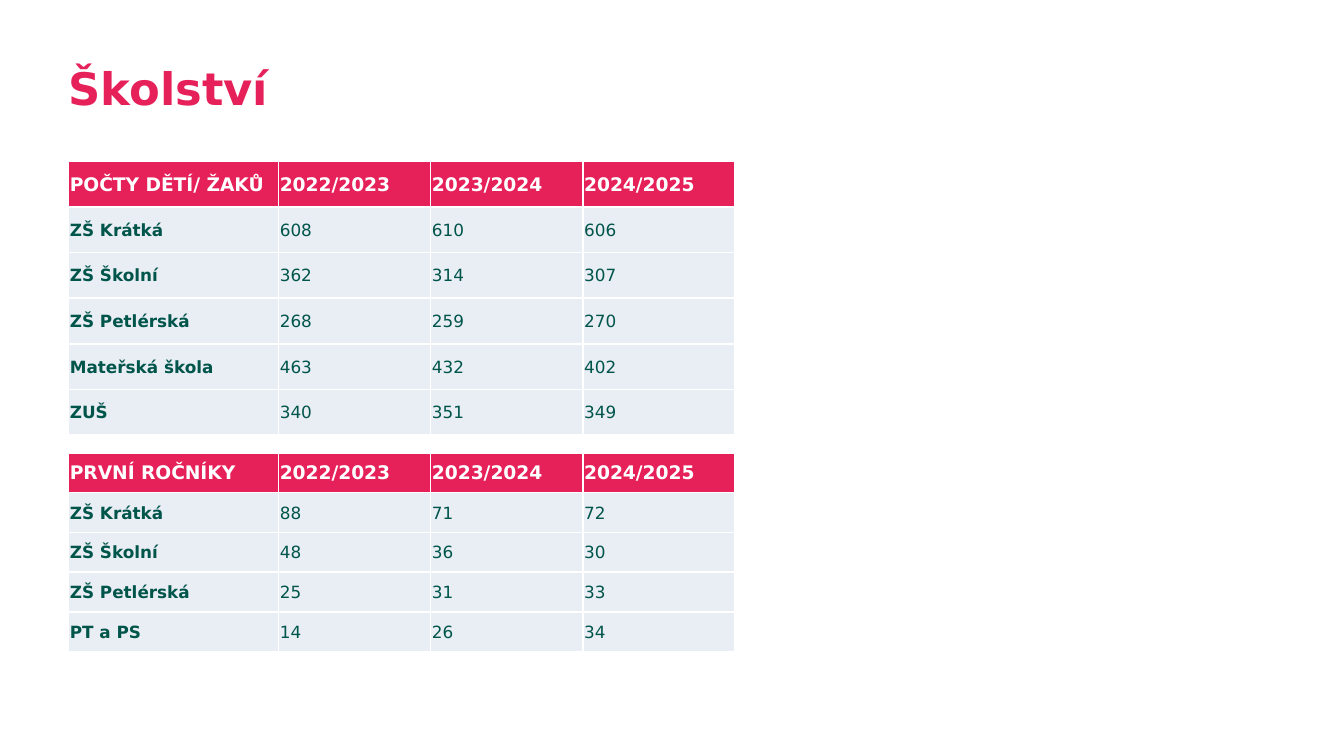
from dataclasses import dataclass

from lxml import etree
from pptx import Presentation
from pptx.dml.color import RGBColor
from pptx.enum.text import MSO_ANCHOR, MSO_AUTO_SIZE, PP_ALIGN
from pptx.oxml.ns import qn
from pptx.util import Inches, Pt

TOP, MIDDLE = MSO_ANCHOR.TOP, MSO_ANCHOR.MIDDLE
LEFT, NO_FIT = PP_ALIGN.LEFT, MSO_AUTO_SIZE.NONE
TITLE_ONLY = 5
LABEL_SHARE = 0.315


@dataclass(frozen=True)
class Theme:
    """Colours and type sizes of the slide."""
    font: str = "DejaVu Sans"
    accent: str = "E6215A"
    ink: str = "00554B"
    band: str = "E9EDF4"
    white: str = "FFFFFF"
    title_size: int = 24
    header_size: int = 10
    body_size: int = 9
    rule_width: int = 1


THEME = Theme()
YEARS = ("2022/2023", "2023/2024", "2024/2025")
PUPIL_COUNTS = [
    ("POČTY DĚTÍ/ ŽAKŮ", *YEARS),
    ("ZŠ Krátká", 608, 610, 606),
    ("ZŠ Školní", 362, 314, 307),
    ("ZŠ Petlérská", 268, 259, 270),
    ("Mateřská škola", 463, 432, 402),
    ("ZUŠ", 340, 351, 349),
]
FIRST_GRADES = [
    ("PRVNÍ ROČNÍKY", *YEARS),
    ("ZŠ Krátká", 88, 71, 72),
    ("ZŠ Školní", 48, 36, 30),
    ("ZŠ Petlérská", 25, 31, 33),
    ("PT a PS", 14, 26, 34),
]


def style_font(font, size, color, bold):
    """Apply the theme typeface with a size, colour and weight."""
    font.name = THEME.font
    font.size = Pt(size)
    font.bold = bold
    font.color.rgb = RGBColor.from_string(color)


def add_borders(cell):
    """Rule all four sides of a cell in white."""
    properties = cell._tc.get_or_add_tcPr()
    for side in ("lnL", "lnR", "lnT", "lnB"):
        rule = etree.SubElement(properties, qn(f"a:{side}"), w=str(Pt(THEME.rule_width)))
        fill = etree.SubElement(rule, qn("a:solidFill"))
        etree.SubElement(fill, qn("a:srgbClr"), val=THEME.white)


def place_title(slide, box, heading):
    """Put the heading into the title placeholder at the given box."""
    title = slide.shapes.title
    title.left, title.top, title.width, title.height = map(Inches, box)
    frame = title.text_frame
    frame.text = heading
    frame.margin_left = frame.margin_right = frame.margin_top = frame.margin_bottom = 0
    frame.vertical_anchor = TOP
    frame.auto_size = NO_FIT
    frame.word_wrap = True
    paragraph = frame.paragraphs[0]
    paragraph.alignment = LEFT
    style_font(paragraph.runs[0].font, THEME.title_size, THEME.accent, True)


def fill_cell(cell, value, is_header, is_label):
    """Write one table value and format its cell."""
    cell.text = str(value)
    cell.margin_left = cell.margin_right = cell.margin_top = Inches(0.01)
    cell.margin_bottom = 0
    cell.vertical_anchor = MIDDLE
    add_borders(cell)
    cell.fill.solid()
    cell.fill.fore_color.rgb = RGBColor.from_string(THEME.accent if is_header else THEME.band)
    size = THEME.header_size if is_header else THEME.body_size
    color = THEME.white if is_header else THEME.ink
    style_font(cell.text_frame.paragraphs[0].runs[0].font, size, color, is_header or is_label)


def place_school_table(slide, box, records):
    """Fill the box with equal rows, a label column and equal year columns."""
    left, top, width, height = map(Inches, box)
    year_count = len(records[0]) - 1
    table = slide.shapes.add_table(len(records), year_count + 1, left, top, width, height).table
    table.horz_banding = False
    label_width = int(width * LABEL_SHARE)
    for index, column in enumerate(table.columns):
        column.width = (width - label_width) // year_count if index else label_width
    for row_index, (row, record) in enumerate(zip(table.rows, records)):
        row.height = height // len(records)
        for column_index, value in enumerate(record):
            fill_cell(row.cells[column_index], value, row_index == 0, column_index == 0)


def main():
    """Build and save the schools slide."""
    deck = Presentation()
    deck.slide_width = Inches(10)
    deck.slide_height = deck.slide_width * 9 // 16
    slide = deck.slides.add_slide(deck.slide_layouts[TITLE_ONLY])
    margin, table_width = 0.51, 4.96
    place_title(slide, (margin, 0.45, 4.37, 0.75), "Školství")
    place_school_table(slide, (margin, 1.2, table_width, 2.04), PUPIL_COUNTS)
    place_school_table(slide, (margin, 3.37, table_width, 1.48), FIRST_GRADES)
    deck.save("out.pptx")


if __name__ == "__main__":
    main()
